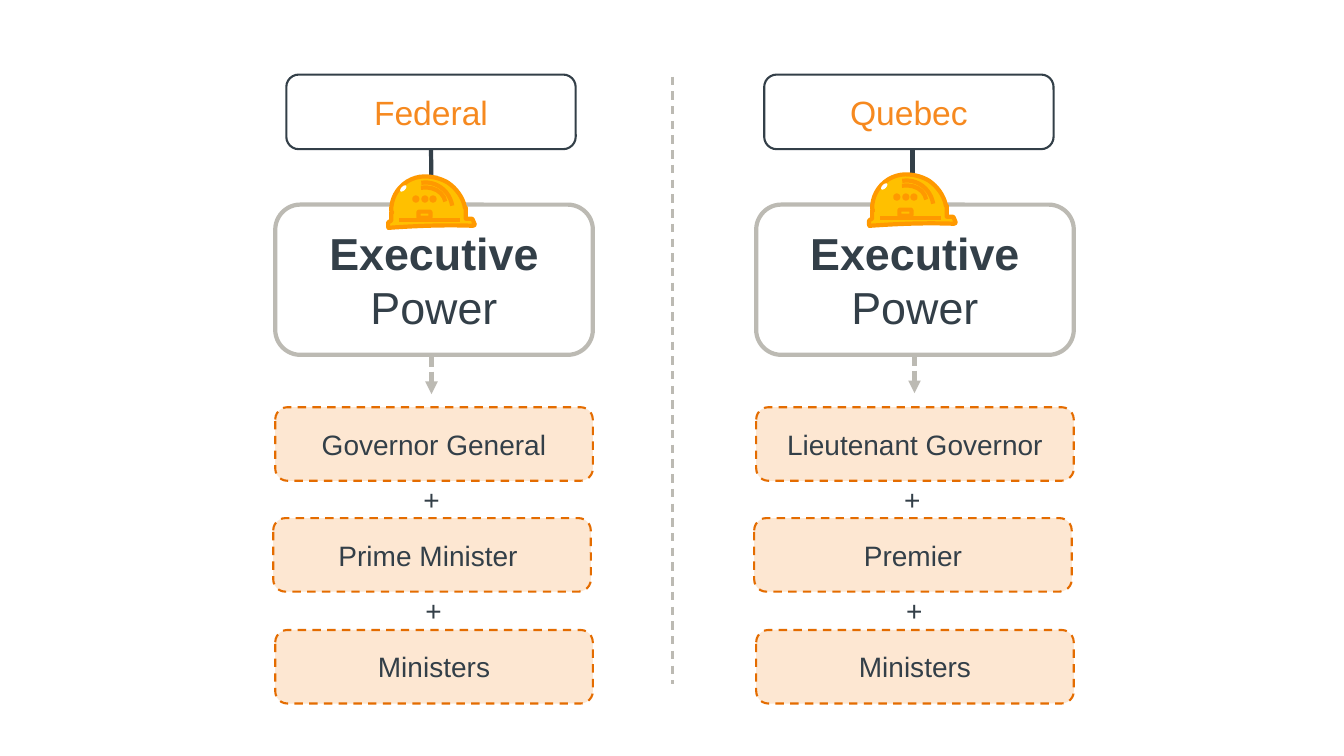
from lxml import etree
from pptx import Presentation
from pptx.dml.color import RGBColor
from pptx.enum.dml import MSO_LINE
from pptx.enum.shapes import MSO_CONNECTOR, MSO_SHAPE
from pptx.enum.text import MSO_ANCHOR, MSO_AUTO_SIZE, PP_ALIGN
from pptx.oxml.ns import qn
from pptx.util import Emu, Pt

PX = 9144  # EMU per px, 100 px to the inch
ROUNDED, OVAL, ARC = MSO_SHAPE.ROUNDED_RECTANGLE, MSO_SHAPE.OVAL, MSO_SHAPE.ARC
STRAIGHT = MSO_CONNECTOR.STRAIGHT
DASH, SHORT_DASH = MSO_LINE.DASH, MSO_LINE.SQUARE_DOT
CENTER, LEFT, MIDDLE = PP_ALIGN.CENTER, PP_ALIGN.LEFT, MSO_ANCHOR.MIDDLE
FIT_SHAPE = MSO_AUTO_SIZE.SHAPE_TO_FIT_TEXT
BOTTOM_SITE = 2

WHITE, SLATE, GREY = "FFFFFF", "333F48", "BCBAB3"
ORANGE, RUST, PEACH = "F6891F", "E46C00", "FDE7D2"
HAT_FILL, HAT_LINE = "FFC000", "FF9900"

POWER = {"size": Pt(32), "name": "Arial", "bold": False}
HEADING = {"size": Pt(24), "name": "Arial"}
OFFICE = {"size": Pt(20), "name": "Arial"}

HEADING_WIDTH = 287
OFFICE_TOPS = (404, 514, 625)
OFFICE_SHIFTS = (0, -2, 0)
PLUS_SHIFTS = (137, 139)

# Outline of the hard hat: one point is a line, three are a curve
HAT_START = (421, 175)
HAT_OUTLINE = (
    ((415, 175), (409, 177), (404, 180)), ((393, 187), (388, 198), (388, 209)),
    ((389, 211),), ((388, 211),), ((388, 219),), ((386, 220),),
    ((386, 220), (385, 220), (385, 221)), ((385, 225),),
    ((385, 226), (386, 227), (386, 226)), ((414, 224), (442, 223), (469, 224)),
    ((470, 224), (471, 223), (471, 223)), ((469, 218),),
    ((469, 218), (469, 217), (468, 217)), ((462, 217),), ((462, 206),),
    ((461, 206),), ((461, 205),), ((459, 196), (453, 187), (444, 181)),
    ((437, 177), (429, 175), (421, 175)),
)


def color(hex_text):
    return RGBColor.from_string(hex_text)


def style_line(line, hex_text, width, dash=None):
    line.color.rgb = color(hex_text)
    line.width = Pt(width)
    if dash:
        line.dash_style = dash


def paint(shape, fill, outline=None):
    shape.shadow.inherit = False
    if fill:
        shape.fill.solid()
        shape.fill.fore_color.rgb = color(fill)
    else:
        shape.fill.background()
    if outline:
        style_line(shape.line, *outline)
    else:
        shape.line.fill.background()


def add_figure(shapes, kind, place, fill, outline=None, rotation=0):
    shape = shapes.add_shape(kind, *(Emu(PX * length) for length in place))
    paint(shape, fill, outline)
    shape.rotation = rotation
    return shape


def write(para, text, hex_text, formats, align=CENTER):
    para.alignment = align
    span = para.add_run()
    span.text = text
    for name, value in formats.items():
        setattr(span.font, name, value)
    span.font.color.rgb = color(hex_text)


def add_box(shapes, place, fill, outline, lines, hex_text):
    box = add_figure(shapes, ROUNDED, place, fill, outline)
    frame = box.text_frame
    frame.word_wrap = True
    frame.vertical_anchor = MIDDLE
    for index, (text, formats) in enumerate(lines):
        para = frame.add_paragraph() if index else frame.paragraphs[0]
        write(para, text, hex_text, formats)
    return box


def add_plus(shapes, left, top):
    box = shapes.add_textbox(*(Emu(PX * length) for length in (left, top, 36, 44)))
    box.text_frame.word_wrap = False
    box.text_frame.auto_size = FIT_SHAPE
    write(box.text_frame.paragraphs[0], "+", SLATE, OFFICE, LEFT)


def add_line(shapes, ends, hex_text, width, dash=None, arrow=False):
    line = shapes.add_connector(STRAIGHT, *(Emu(PX * length) for length in ends))
    style_line(line.line, hex_text, width, dash)
    properties = line._element.spPr
    if arrow:
        etree.SubElement(properties.find(qn("a:ln")), qn("a:tailEnd"), type="triangle")
    etree.SubElement(properties, qn("a:effectLst"))
    return line


def add_outline(shapes, start, segments, fill, outline):
    builder = shapes.build_freeform(*start, scale=float(PX))
    builder.add_line_segments([segment[-1] for segment in segments], close=True)
    shape = builder.convert_to_shape()
    paint(shape, fill, outline)

    # Bend the sides that have control points
    ends = [start, *(segment[-1] for segment in segments)]
    left, top = (min(axis) for axis in zip(*ends))
    sides = list(shape._element.iter(qn("a:lnTo")))
    for side, segment in zip(sides, segments):
        if len(segment) == 3:
            curve = etree.Element(qn("a:cubicBezTo"))
            for x, y in segment:
                etree.SubElement(curve, qn("a:pt"), x=str(x - left), y=str(y - top))
            side.getparent().replace(side, curve)


def add_hat(shapes, dx, dy):
    hat = shapes.add_group_shape().shapes
    outline = (HAT_LINE, 3)

    # Shell and brim
    segments = [[(x + dx, y + dy) for x, y in segment] for segment in HAT_OUTLINE]
    start = (HAT_START[0] + dx, HAT_START[1] + dy)
    add_outline(hat, start, segments, HAT_FILL, outline)

    # Ridges, band, vents, buckle and glint
    for left, top, width, height in ((396, 181, 53, 55), (399, 186, 43, 35)):
        add_figure(hat, ARC, (left + dx, top + dy, width, height), None, outline, -9.6)
    add_line(hat, (456 + dx, 218 + dy, 396 + dx, 218 + dy), *outline)
    for left in (420, 411, 428):
        add_figure(hat, OVAL, (left + dx, 196 + dy, 3, 3), HAT_FILL, outline)
    add_figure(hat, ROUNDED, (415 + dx, 210 + dy, 12, 6), HAT_FILL, outline)
    add_figure(hat, OVAL, (398 + dx, 183 + dy, 4, 8), WHITE, rotation=45)


def add_government(shapes, left, heading, heading_left, stem_x, arrow_start, hat_shift, offices):
    # Executive power and the arrow below it
    add_box(shapes, (left, 203, 315, 149), WHITE, (GREY, 3),
            (("Executive", {**POWER, "bold": True}), ("Power", POWER)), SLATE)
    x, y = arrow_start
    add_line(shapes, (x, y, x, y + 39), GREY, 3, SHORT_DASH, arrow=True)

    # Heading, stem and hat
    heading_box = add_box(shapes, (heading_left, 74, HEADING_WIDTH, 74), WHITE,
                          (SLATE, 1.5), ((heading, HEADING),), ORANGE)
    stem = add_line(shapes, (stem_x, 148, stem_x, 187), SLATE, 3, arrow=True)
    if abs(heading_left + HEADING_WIDTH / 2 - stem_x) < 1:
        stem.begin_connect(heading_box, BOTTOM_SITE)
    add_hat(shapes, *hat_shift)

    # Offices, with a plus between each pair
    for office, top, shift in zip(offices, OFFICE_TOPS, OFFICE_SHIFTS):
        add_box(shapes, (left + shift, top, 315, 73), PEACH, (RUST, 1.5, DASH),
                ((office, OFFICE),), SLATE)
    for top, shift in zip(OFFICE_TOPS, PLUS_SHIFTS):
        add_plus(shapes, left + shift, top + 70)


def main():
    deck = Presentation()
    deck.slide_width, deck.slide_height = Emu(1333 * PX), Emu(750 * PX)
    page = deck.slides.add_slide(deck.slide_layouts[6])

    # Divider between the two governments
    add_line(page.shapes, (667, 76, 667, 679), GREY, 1.5, DASH)
    add_government(page.shapes, 273, "Federal", 284, 428, (428, 352), (0, 0),
                   ("Governor General", "Prime Minister ", "Ministers"))
    add_government(page.shapes, 750, "Quebec", 758, 905, (907, 351), (477, -2),
                   ("Lieutenant Governor", "Premier", "Ministers"))
    deck.save("out.pptx")


if __name__ == "__main__":
    main()
